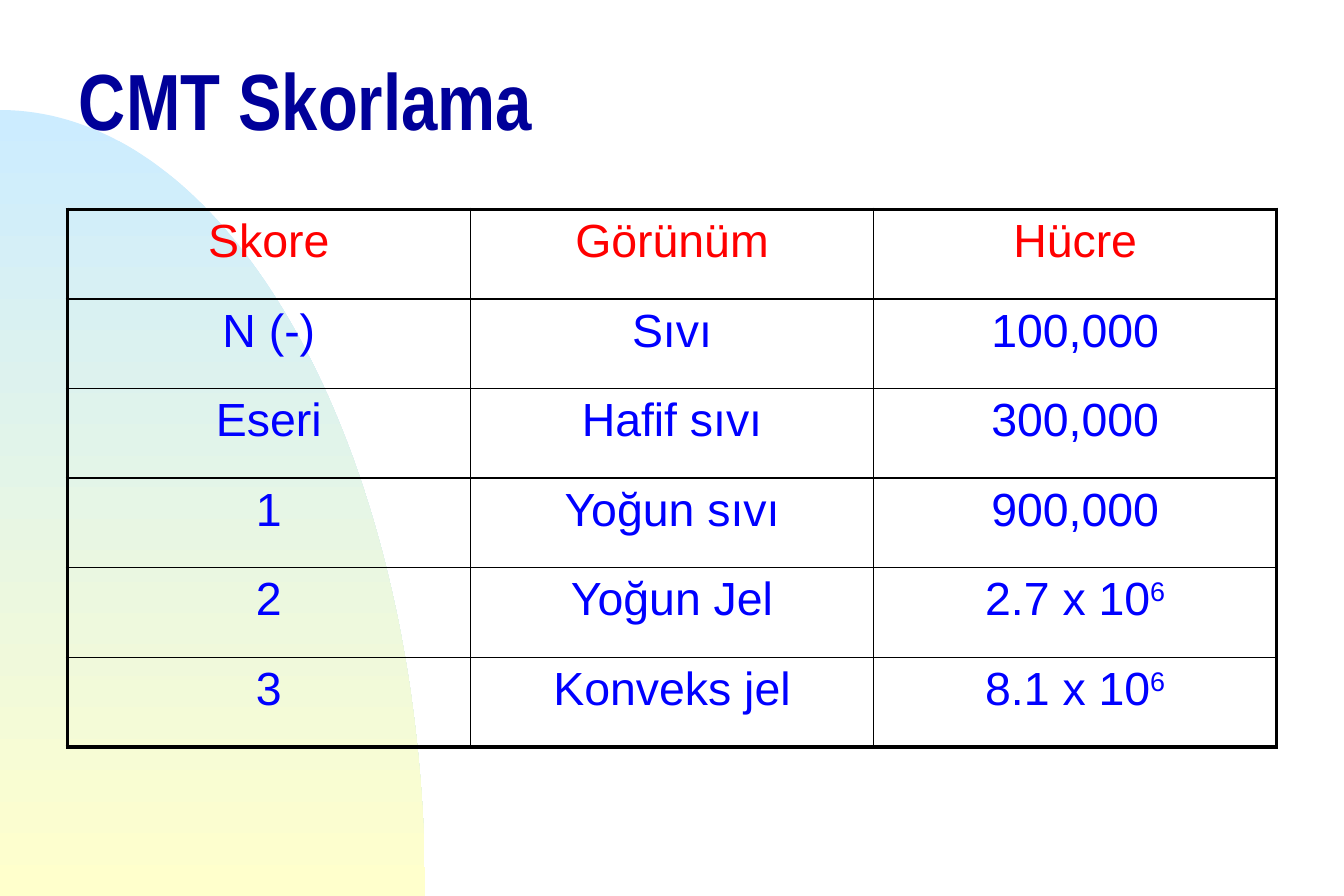
from lxml import etree
from pptx import Presentation
from pptx import util as u
from pptx.dml.color import RGBColor
from pptx.enum import text
from pptx.oxml import ns

ROWS = [
    ("Skore", "Görünüm", "Hücre"),
    ("N (-)", "Sıvı", "100,000"),
    ("Eseri", "Hafif sıvı", "300,000"),
    ("1", "Yoğun sıvı", "900,000"),
    ("2", "Yoğun Jel", "2.7 x 10^6"),
    ("3", "Konveks jel", "8.1 x 10^6"),
]
THIN, THICK = 1, 2.25


def color(value):
    return RGBColor.from_string(value)


def style_font(font, name, size, hex_color, bold=False):
    font.name = name
    font.size = u.Pt(size)
    font.bold = bold
    font.color.rgb = color(hex_color)


def bezier(start, control1, control2, end, steps=80):
    for step in range(steps + 1):
        t = step / steps
        weights = ((1 - t) ** 3, 3 * t * (1 - t) ** 2, 3 * t ** 2 * (1 - t), t ** 3)
        yield tuple(
            u.Cm(sum(weight * value for weight, value in zip(weights, values)))
            for values in zip(start, control1, control2, end)
        )


def add_gradient_arc(slide):
    points = list(bezier((0, 2.34), (5, 2.34), (9.04, 9.83), (9.04, 19.05)))
    builder = slide.shapes.build_freeform(*points[0])
    builder.add_line_segments(points[1:] + [(0, u.Cm(19.05))], close=True)
    shape = builder.convert_to_shape()
    shape.shadow.inherit = False
    shape.line.fill.background()
    shape.fill.gradient()
    shape.fill.gradient_angle = 270
    for stop, hex_color in zip(shape.fill.gradient_stops, ("CCECFF", "FFFFCC")):
        stop.color.rgb = color(hex_color)


def add_title(slide, title):
    box = slide.shapes.add_textbox(u.Cm(1.43), u.Cm(0.76), u.Cm(25.72), u.Cm(3.18))
    frame = box.text_frame
    frame.word_wrap = True
    frame.vertical_anchor = text.MSO_ANCHOR.MIDDLE
    paragraph = frame.paragraphs[0]
    paragraph.text = title
    paragraph.line_spacing = 0.7
    style_font(paragraph.font, "Arial Narrow", 48, "000099", bold=True)


def set_borders(cell, widths):
    properties = cell._tc.get_or_add_tcPr()
    for index, (side, width) in enumerate(widths.items()):
        line = etree.Element(ns.qn(f"a:ln{side}"), w=str(u.Pt(width)))
        fill = etree.SubElement(line, ns.qn("a:solidFill"))
        etree.SubElement(fill, ns.qn("a:srgbClr"), val="000000")
        properties.insert(index, line)


def fill_cell(cell, content, hex_color):
    cell.fill.background()
    cell.margin_left = cell.margin_right = u.Cm(0.28)
    cell.margin_top = cell.margin_bottom = u.Cm(0.13)
    paragraph = cell.text_frame.paragraphs[0]
    paragraph.alignment = text.PP_ALIGN.CENTER
    style_font(paragraph.font, "Arial", 28, hex_color)
    base, _, exponent = content.partition("^")
    paragraph.add_run().text = base
    if exponent:
        run = paragraph.add_run()
        run.text = exponent
        run.font._element.set("baseline", "30000")


def add_score_table(slide, rows):
    last_row, last_column = len(rows) - 1, len(rows[0]) - 1
    table = slide.shapes.add_table(
        len(rows), len(rows[0]), u.Cm(1.43), u.Cm(4.45), u.Cm(25.72), u.Cm(11.43)
    ).table
    table.first_row = table.horz_banding = False
    for i, row in enumerate(rows):
        for j, content in enumerate(row):
            cell = table.cell(i, j)
            fill_cell(cell, content, "0000FF" if i else "FF0000")
            set_borders(cell, {
                "L": THICK if j == 0 else THIN,
                "R": THICK if j == last_column else THIN,
                "T": THICK if i == 0 else THIN,
                "B": THICK if i == last_row else THIN,
            })


def main():
    presentation = Presentation()
    presentation.slide_width = u.Cm(28.58)
    presentation.slide_height = u.Cm(19.05)
    slide = presentation.slides.add_slide(presentation.slide_layouts[6])
    add_gradient_arc(slide)
    add_title(slide, "CMT Skorlama")
    add_score_table(slide, ROWS)
    presentation.save("out.pptx")


if __name__ == "__main__":
    main()
